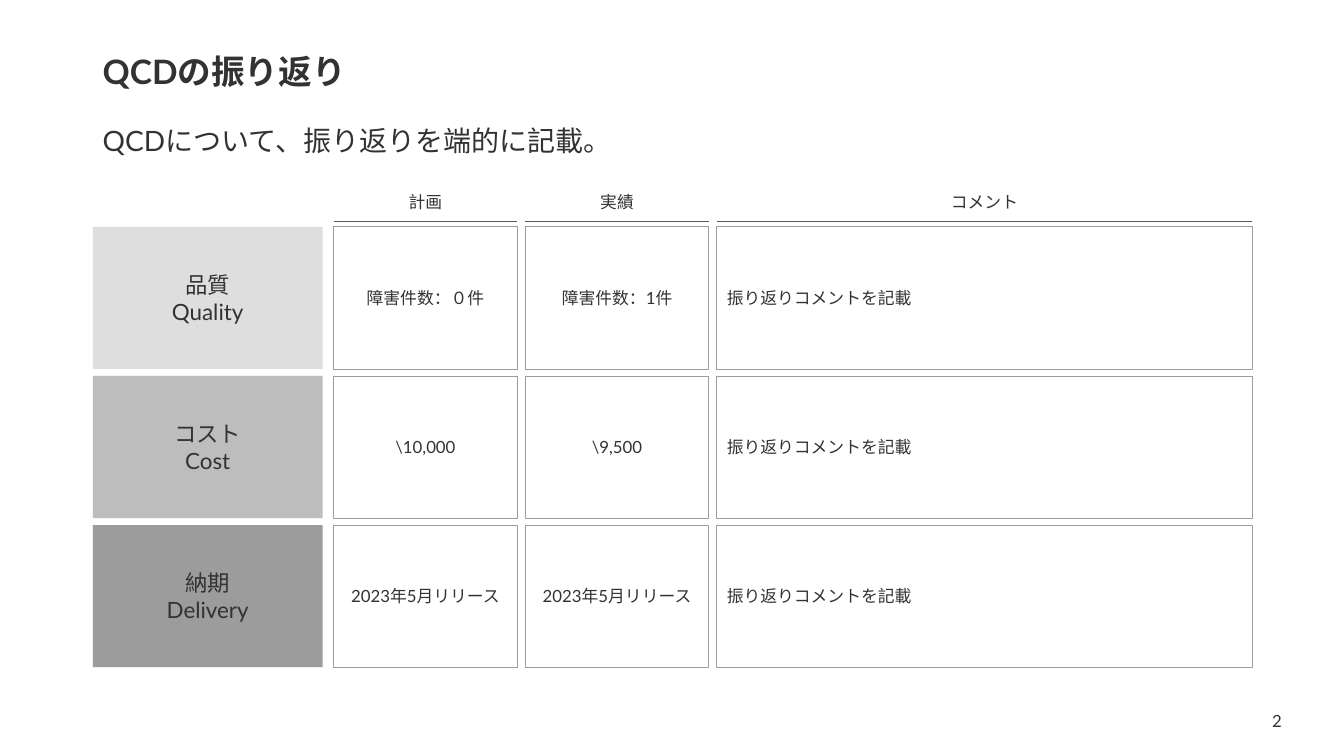
from pptx import Presentation
from pptx.dml.color import RGBColor
from pptx.enum.shapes import MSO_CONNECTOR, MSO_SHAPE
from pptx.enum.text import MSO_ANCHOR, PP_ALIGN
from pptx.oxml.ns import qn
from pptx.util import Pt
from lxml import etree

PX = 9144  # EMU per px, 100 px to the inch
LEFT, CENTER = PP_ALIGN.LEFT, PP_ALIGN.CENTER
MIDDLE = MSO_ANCHOR.MIDDLE
RECTANGLE = MSO_SHAPE.RECTANGLE
STRAIGHT = MSO_CONNECTOR.STRAIGHT
FONT = "Lato"
COLORS = {
    "text": "323232",
    "border": "9C9C9C",
    "header_line": "5A5A5A",
    "quality": "DEDEDE",
    "cost": "BDBDBD",
    "delivery": "9C9C9C",
}

MARGIN_LEFT, CONTENT_WIDTH = 92, 1150
LABEL_WIDTH = 228
ROW_TOP, ROW_HEIGHT, ROW_STEP = 225, 141, 148
HEADER_TOP, HEADER_HEIGHT, HEADER_LINE_Y = 185, 30, 220

# heading, left, width, alignment of the cells
COLUMNS = [
    ("計画", 331, 182, CENTER),
    ("実績", 521, 182, CENTER),
    ("コメント", 711, 531, LEFT),
]
# colour, label lines, cell texts
ROWS = [
    ("quality", ["品質", "Quality"],
     ["障害件数：０件", "障害件数：1件", "振り返りコメントを記載"]),
    ("cost", ["コスト", "Cost"],
     ["\\10,000", "\\9,500", "振り返りコメントを記載"]),
    ("delivery", ["納期", "Delivery"],
     ["2023年5月リリース", "2023年5月リリース", "振り返りコメントを記載"]),
]

presentation = Presentation()
presentation.slide_width = 1333 * PX
presentation.slide_height = 750 * PX
slide = presentation.slides.add_slide(presentation.slide_layouts[6])


def write(shape, lines, size, alignment=CENTER, bold=False, line_spacing=None):
    """Fill a shape with one paragraph per line, centred vertically."""
    frame = shape.text_frame
    frame.word_wrap = True
    frame.vertical_anchor = MIDDLE
    for index, line in enumerate(lines):
        paragraph = frame.add_paragraph() if index else frame.paragraphs[0]
        paragraph.alignment = alignment
        paragraph.line_spacing = line_spacing
        run = paragraph.add_run()
        run.text = line
        run.font.name = FONT
        run.font.size = Pt(size)
        run.font.bold = bold
        run.font.color.rgb = RGBColor.from_string(COLORS["text"])


def add_box(left, top, width, fill=None):
    """Add a row-high rectangle: filled without a line, or outlined only."""
    box = slide.shapes.add_shape(
        RECTANGLE, left * PX, top * PX, width * PX, ROW_HEIGHT * PX)
    box.shadow.inherit = False
    if fill:
        box.fill.solid()
        box.fill.fore_color.rgb = RGBColor.from_string(COLORS[fill])
        box.line.fill.background()
    else:
        box.fill.background()
        box.line.color.rgb = RGBColor.from_string(COLORS["border"])
        box.line.width = Pt(0.5)
    return box


# Title, message and page number
title = slide.shapes.add_textbox(
    MARGIN_LEFT * PX, 40 * PX, CONTENT_WIDTH * PX, 67 * PX)
write(title, ["QCDの振り返り"], 24, LEFT, bold=True, line_spacing=0.9)

message = slide.shapes.add_textbox(
    MARGIN_LEFT * PX, 108 * PX, CONTENT_WIDTH * PX, 67 * PX)
write(message, ["QCDについて、振り返りを端的に記載。"], 20, LEFT, line_spacing=0.9)

page_number = slide.shapes.add_textbox(1242 * PX, 695 * PX, 49 * PX, 40 * PX)
write(page_number, ["2"], 12)

# Column headings with their underlines
for heading, left, width, _ in COLUMNS:
    header = slide.shapes.add_textbox(
        left * PX, HEADER_TOP * PX, width * PX, HEADER_HEIGHT * PX)
    write(header, [heading], 12)
    underline = slide.shapes.add_connector(
        STRAIGHT, left * PX, HEADER_LINE_Y * PX,
        (left + width) * PX, HEADER_LINE_Y * PX)
    underline.line.color.rgb = RGBColor.from_string(COLORS["header_line"])
    underline.line.width = Pt(0.5)
    etree.SubElement(underline._element.spPr, qn("a:effectLst"))

# Quality, cost and delivery rows
for row_index, (color, label_lines, cell_texts) in enumerate(ROWS):
    top = ROW_TOP + row_index * ROW_STEP
    write(add_box(MARGIN_LEFT, top, LABEL_WIDTH, color), label_lines, 16)
    for (_, left, width, alignment), cell_text in zip(COLUMNS, cell_texts):
        write(add_box(left, top, width), [cell_text], 12, alignment)

presentation.save("out.pptx")
